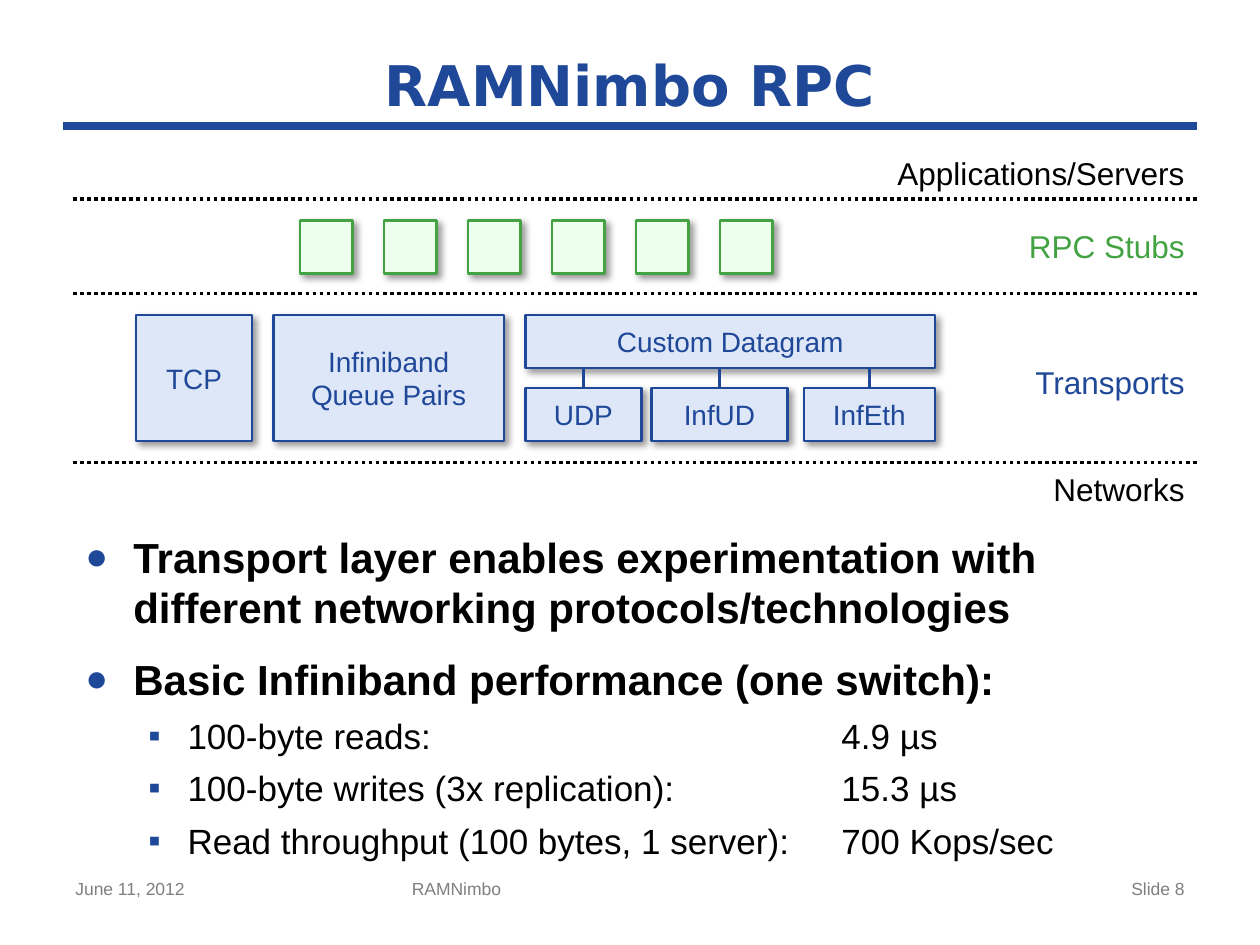
import pptx
import pptx.dml.color
import pptx.enum.dml
import pptx.enum.shapes
import pptx.enum.text
import pptx.oxml
import pptx.oxml.ns
import pptx.util
from pptx.util import Inches

BLUE, PALE_BLUE = "1F4899", "DEE7F8"
GREEN, PALE_GREEN = "43A343", "EDFFED"
BLACK, GRAY = "000000", "7F7F7F"
ALIGN = pptx.enum.text.PP_ALIGN
MIDDLE = pptx.enum.text.MSO_ANCHOR.MIDDLE
RECTANGLE = pptx.enum.shapes.MSO_SHAPE.RECTANGLE
STRAIGHT = pptx.enum.shapes.MSO_CONNECTOR.STRAIGHT
DOTTED = pptx.enum.dml.MSO_LINE.ROUND_DOT
SHADOW = (
    '<a:outerShdw blurRad="50800" dist="38100" dir="2700000" algn="tl" rotWithShape="0">'
    '<a:srgbClr val="000000"><a:alpha val="40000"/></a:srgbClr></a:outerShdw>'
)


def rgb(value):
    return pptx.dml.color.RGBColor.from_string(value)


def parse_drawing(tag, attributes="", content=""):
    namespace = pptx.oxml.ns.nsdecls("a")
    return pptx.oxml.parse_xml(f"<a:{tag} {namespace} {attributes}>{content}</a:{tag}>")


def set_effects(shape, effects=""):
    properties = shape._element.spPr
    for existing in properties.findall(pptx.oxml.ns.qn("a:effectLst")):
        properties.remove(existing)
    properties.append(parse_drawing("effectLst", content=effects))


def write(paragraph, text, size, color, bold=False, font="Arial", **layout):
    run = paragraph.add_run()
    run.text = text
    formats = {"name": font, "size": pptx.util.Pt(size), "bold": bold}
    for name, value in formats.items():
        setattr(run.font, name, value)
    run.font.color.rgb = rgb(color)
    for name, value in layout.items():
        setattr(paragraph, name, value)


def add_label(slide, box, text, size, color, align=ALIGN.LEFT, wrap=True, anchor=None, **font):
    frame = slide.shapes.add_textbox(*map(Inches, box)).text_frame
    frame.word_wrap = wrap
    if anchor is not None:
        frame.vertical_anchor = anchor
    write(frame.paragraphs[0], text, size, color, alignment=align, **font)


def add_rule(slide, start, end, color, width, dash=None):
    rule = slide.shapes.add_connector(STRAIGHT, *map(Inches, start + end))
    rule.line.color.rgb = rgb(color)
    rule.line.width = pptx.util.Pt(width)
    if dash is not None:
        rule.line.dash_style = dash
    set_effects(rule)
    return rule


def add_block(shapes, box, fill, outline, lines=()):
    block = shapes.add_shape(RECTANGLE, *map(Inches, box))
    block.fill.solid()
    block.fill.fore_color.rgb = rgb(fill)
    block.line.color.rgb = rgb(outline)
    block.line.width = pptx.util.Pt(1.5)
    set_effects(block, SHADOW)
    frame = block.text_frame
    frame.word_wrap = False
    frame.vertical_anchor = MIDDLE
    for index, line in enumerate(lines):
        paragraph = frame.add_paragraph() if index else frame.paragraphs[0]
        write(paragraph, line, 16, outline, alignment=ALIGN.CENTER)
    return block


def add_heading(slide, left, top, width, height):
    add_rule(slide, (left, top + height), (left + width, top + height), BLUE, 4.5)
    add_label(slide, (left, top, width, height), "RAMNimbo RPC", 32, BLUE, ALIGN.CENTER,
              anchor=MIDDLE, bold=True, font="DejaVu Sans")


def add_layers(slide, left, top, width):
    """Dotted boundaries and the right-aligned names of the layers."""
    right = left + width
    for offset in (0.41, 1.16, 2.5):
        add_rule(slide, (left, top + offset), (right, top + offset), BLACK, 2, DOTTED)
    layers = [
        ("Applications/Servers", 0, 3.5, BLACK, True),
        ("RPC Stubs", 0.58, 1.58, GREEN, True),
        ("Transports", 1.66, 1.58, BLUE, True),
        ("Networks", 2.51, 1.25, BLACK, False),
    ]
    for name, offset, label_width, color, wrap in layers:
        add_label(slide, (right - label_width, top + offset, label_width, 0.4),
                  name, 18, color, ALIGN.RIGHT, wrap)


def add_stubs(slide, left, top, side, count=6):
    stubs = slide.shapes.add_group_shape()
    pitch = 2 / 3
    for index in range(count):
        add_block(stubs.shapes, (left + index * pitch, top, side, side), PALE_GREEN, GREEN)


def add_transports(slide, left, top, height):
    row_height = 0.42
    row_top = top + height - row_height
    blocks = [
        (["Infiniband", "Queue Pairs"], 1.09, 1.83, height),
        (["Custom Datagram"], 3.09, 3.25, row_height),
        (["TCP"], 0, 0.92, height),
    ]
    for lines, offset, width, block_height in blocks:
        add_block(slide.shapes, (left + offset, top, width, block_height),
                  PALE_BLUE, BLUE, lines)
    for protocol, offset, width in [("UDP", 3.09, 0.92), ("InfUD", 4.09, 1.08),
                                    ("InfEth", 5.3, 1.04)]:
        block = add_block(slide.shapes, (left + offset, row_top, width, row_height),
                          PALE_BLUE, BLUE, [protocol])
        center = left + offset + width / 2
        link = add_rule(slide, (center, top + row_height), (center, row_top), BLUE, 1.5)
        link.end_connect(block, 0)


def add_bullet(paragraph, character, indent, hanging, size=100, tab=None):
    properties = paragraph._p.get_or_add_pPr()
    properties.set("marL", str(Inches(indent)))
    properties.set("indent", str(-Inches(hanging)))
    color = f'<a:srgbClr val="{BLUE}"/>'
    properties.append(parse_drawing("buClr", content=color))
    properties.append(parse_drawing("buSzPct", f'val="{size * 1000}"'))
    properties.append(parse_drawing("buFont", 'typeface="Arial"'))
    properties.append(parse_drawing("buChar", f'char="{character}"'))
    if tab is not None:
        stop = f'<a:tab pos="{Inches(tab)}" algn="l"/>'
        properties.append(parse_drawing("tabLst", content=stop))


def add_findings(slide, *box):
    frame = slide.shapes.add_textbox(*map(Inches, box)).text_frame
    frame.word_wrap = True
    findings = [
        (0, "Transport layer enables experimentation with "
            "different networking protocols/technologies"),
        (0, "Basic Infiniband performance (one switch):"),
        (1, "100-byte reads:\t4.9 µs"),
        (1, "100-byte writes (3x replication):\t15.3 µs"),
        (1, "Read throughput (100 bytes, 1 server):\t700 Kops/sec"),
    ]
    for index, (level, text) in enumerate(findings):
        paragraph = frame.add_paragraph() if index else frame.paragraphs[0]
        write(paragraph, text, (24, 20)[level], BLACK, bold=level == 0,
              level=level, space_before=pptx.util.Pt((12, 6)[level]))
        if level:
            add_bullet(paragraph, "▪", 0.81, 0.31, tab=6)
        else:
            add_bullet(paragraph, "●", 0.38, 0.38, size=90)


def add_footer(slide, left, top, height):
    for text, offset, width, align in [
        ("June 11, 2012", 0, 2.33, ALIGN.LEFT),
        ("RAMNimbo", 2.67, 3.75, ALIGN.LEFT),
        ("Slide 8", 6.67, 2.33, ALIGN.RIGHT),
    ]:
        add_label(slide, (left + offset, top, width, height), text, 10, GRAY, align)


def main():
    presentation = pptx.Presentation()
    presentation.slide_width = Inches(10)
    presentation.slide_height = Inches(7.5)
    slide = presentation.slides.add_slide(presentation.slide_layouts[6])
    add_heading(slide, 0.5, 0.33, 9, 0.67)
    add_layers(slide, 0.58, 1.17, 8.92)
    add_stubs(slide, 2.38, 1.75, 0.42)
    add_transports(slide, 1.08, 2.5, 1)
    add_findings(slide, 0.58, 4.17, 8.92, 2.53)
    add_footer(slide, 0.5, 6.92, 0.43)
    presentation.save("out.pptx")


if __name__ == "__main__":
    main()
